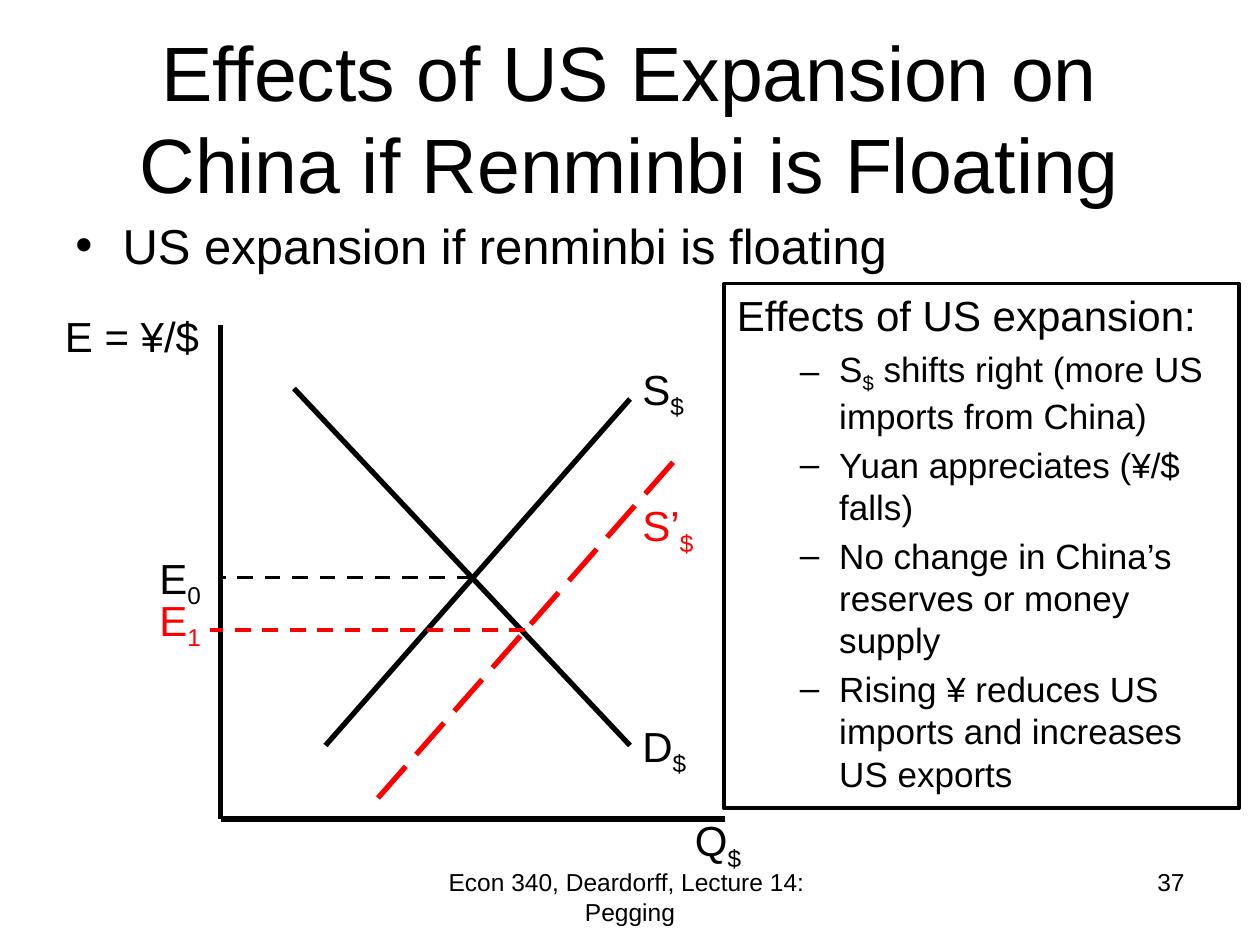
import pptx
import pptx.util
import pptx.dml.color
import pptx.enum.dml
import pptx.enum.shapes
import pptx.enum.text
import pptx.oxml
import pptx.oxml.ns

Pt = pptx.util.Pt
RGB = pptx.dml.color.RGBColor
Dash = pptx.enum.dml.MSO_LINE
Align = pptx.enum.text.PP_ALIGN
Anchor = pptx.enum.text.MSO_ANCHOR
Kind = pptx.enum.shapes

BLACK = RGB(0, 0, 0)
RED = RGB(255, 0, 0)
FONT = "Arial"

# Content: a bar toggles subscript on and off
TITLE = "Effects of US Expansion on China if Renminbi is Floating"
LEAD = "US expansion if renminbi is floating"
HEAD = "Effects of US expansion:"
EFFECTS = [
    "S|$| shifts right (more US imports from China)",
    "Yuan appreciates (¥/$ falls)",
    "No change in China’s reserves or money supply",
    "Rising ¥ reduces US imports and increases US exports",
]
FOOTER = "Econ 340, Deardorff, Lecture 14:  Pegging"
NUMBER = "37"

# Graph: origin, supply curve and the size of its shift
LEFT, BASE = 126, 468
LOW, HIGH = (186, 426), (360, 228)
SHIFT = 30
CURVES = [  # start, end, colour, width, dash
    ((LEFT, 186), (LEFT, BASE), BLACK, 3, None),
    ((LEFT, BASE), (414, BASE), BLACK, 3, None),
    (LOW, HIGH, BLACK, 3, None),
    ((360, 426), (168, 222), BLACK, 3, None),
    ((270, 330), (LEFT, 330), BLACK, 2.25, Dash.DASH),
    ([v + SHIFT for v in LOW], [v + SHIFT for v in HIGH], RED, 3, Dash.LONG_DASH),
    ((300, 360), (120, 360), RED, 2.25, Dash.DASH),
]
LABELS = [  # text, left, top, width, colour
    ("S|$", 360, 204, 54, BLACK),
    ("D|$", 360, 408, 60, BLACK),
    ("Q|$", 390, 462, 48, BLACK),
    ("E = ¥/$", 30, 174, 96, BLACK),
    ("E|0", 84, 312, 96, BLACK),
    ("S’|$", 360, 282, 54, RED),
    ("E|1", 84, 336, 96, RED),
]

deck = pptx.Presentation()
deck.slide_width, deck.slide_height = Pt(720), Pt(540)
slide = deck.slides.add_slide(deck.slide_layouts[6])
shapes = slide.shapes


def add_sub(parent, tag, **attrs):
    node = pptx.oxml.parse_xml(f"<a:{tag} {pptx.oxml.ns.nsdecls('a')}/>")
    for key, val in attrs.items():
        node.set(key, val)
    parent.append(node)


def write(text, area=None, frame=None, size=24, color=BLACK, align=Align.LEFT,
          anchor=Anchor.TOP, bullet=None, margin=0, indent=0, before=0,
          spacing=None, level=0):
    """Write one paragraph in a new box, or add it to the given frame."""
    if frame is None:
        frame = shapes.add_textbox(*map(Pt, area)).text_frame
    frame.word_wrap = True
    frame.vertical_anchor = anchor
    para = frame.paragraphs[0]
    if para.runs:
        para = frame.add_paragraph()
    para.alignment, para.level = align, level
    para.space_before = Pt(before)
    if spacing:
        para.line_spacing = spacing
    props = para._p.get_or_add_pPr()
    props.set("marL", str(Pt(margin)))
    props.set("indent", str(Pt(indent)))
    if bullet:
        add_sub(props, "buFont", typeface=FONT)
        add_sub(props, "buChar", char=bullet)
    for i, part in enumerate(text.split("|")):
        run = para.add_run()
        run.text = part
        font = run.font
        font.name, font.size, font.color.rgb = FONT, Pt(size), color
        if i % 2:
            run._r.get_or_add_rPr().set("baseline", "-25000")


# Footer, title and lead
write(FOOTER, (246, 492, 228, 37.5), size=14, align=Align.CENTER)
write(NUMBER, (516, 492, 168, 37.5), size=14, align=Align.RIGHT)
write(TITLE, (36, 21.6, 648, 90), size=44, align=Align.CENTER, anchor=Anchor.MIDDLE)
write(LEAD, (36, 126, 570, 48), size=28, bullet="•", margin=27, indent=-27,
      spacing=0.8)

# Box of effects
box = shapes.add_shape(Kind.MSO_SHAPE.RECTANGLE, *map(Pt, (414, 162, 294, 300)))
box.shadow.inherit = False
box.fill.background()
box.line.color.rgb, box.line.width = BLACK, Pt(2.25)
write(HEAD, frame=box.text_frame, margin=27, indent=-27)
for item in EFFECTS:
    write(item, frame=box.text_frame, size=20, bullet="–", margin=58.5,
          indent=-22.5, before=4, level=1)

# Axes, curves and price lines
for start, end, color, width, dash in CURVES:
    line = shapes.add_connector(Kind.MSO_CONNECTOR.STRAIGHT,
                                *map(Pt, (*start, *end)))
    line.line.color.rgb, line.line.width = color, Pt(width)
    if dash:
        line.line.dash_style = dash
    add_sub(line._element.spPr, "effectLst")

# Graph labels
for text, left, top, width, color in LABELS:
    write(text, (left, top, width, 36), color=color)

deck.save("out.pptx")
